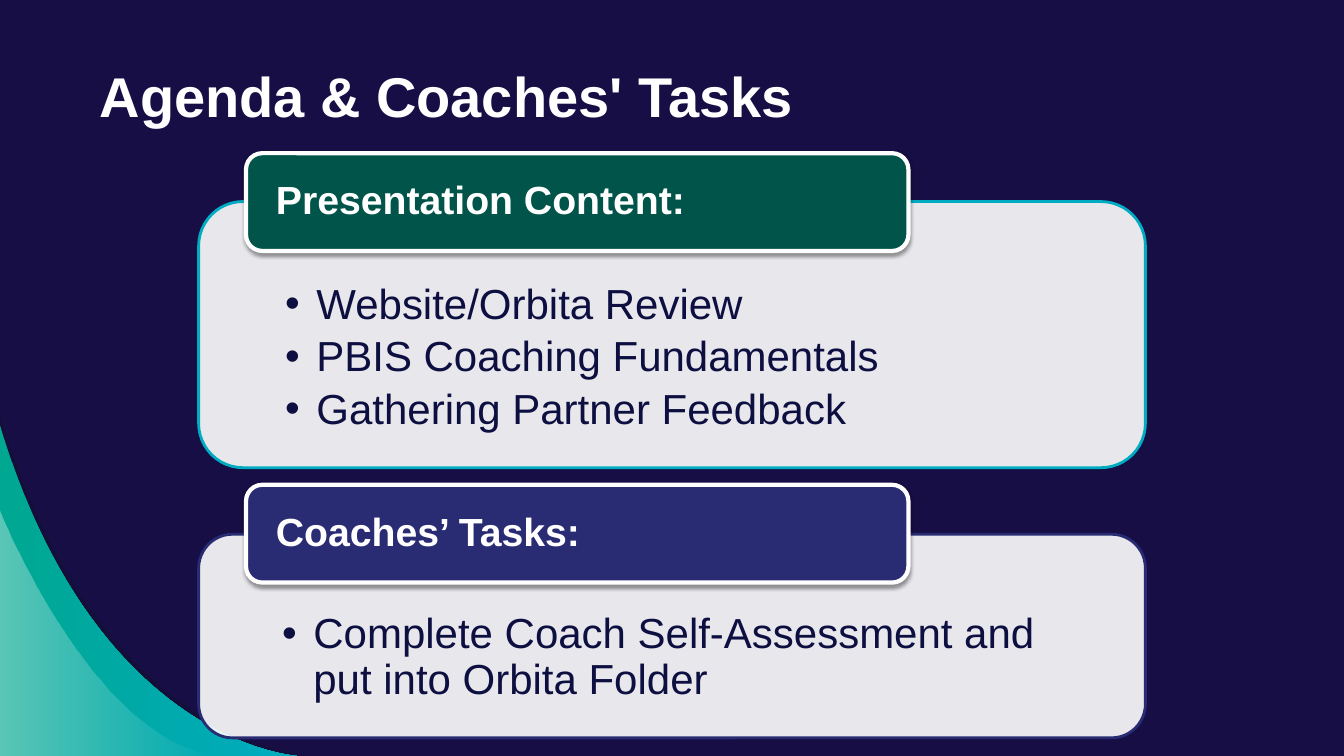
from dataclasses import dataclass

from lxml import etree
from pptx import Presentation
from pptx.dml.color import RGBColor
from pptx.enum.shapes import MSO_SHAPE
from pptx.enum.text import MSO_ANCHOR, PP_ALIGN
from pptx.oxml.ns import qn
from pptx.util import Pt

PX = 9144  # EMU per px, 100 px to the inch
W, H = 1333, 750
ROUNDED = MSO_SHAPE.ROUNDED_RECTANGLE
TOP, MIDDLE = MSO_ANCHOR.TOP, MSO_ANCHOR.MIDDLE
LEFT = PP_ALIGN.LEFT


@dataclass(frozen=True)
class Theme:
    font: str = "Arial"
    background: str = "160E44"
    swoosh_shade: str = "12102F"
    teal: str = "00A791"
    cyan: str = "00ACC2"
    green: str = "005449"
    indigo: str = "292C73"
    white: str = "FFFFFF"
    ink: str = "0D0F41"
    title_size: int = 40
    header_size: int = 28
    body_size: int = 30


def write_text(sp, lines, *, size, color, bold=False, anchor=TOP,
               insets=(0, 0, 0, 0), spacing=1.0, after=0, hanging=0):
    """Fill a shape with paragraphs; a hanging indent in px adds bullets."""
    tf = sp.text_frame
    tf.word_wrap = True
    tf.vertical_anchor = anchor
    tf.margin_left, tf.margin_top, tf.margin_right, tf.margin_bottom = (
        v * PX for v in insets)
    for i, line in enumerate(lines):
        p = tf.add_paragraph() if i else tf.paragraphs[0]
        p.alignment = LEFT
        p.line_spacing = spacing
        p.space_after = Pt(after)
        if hanging:
            pPr = p._p.get_or_add_pPr()
            pPr.set("marL", str(hanging * PX))
            pPr.set("indent", str(-hanging * PX))
            etree.SubElement(pPr, qn("a:buFont"), typeface=Theme.font)
            etree.SubElement(pPr, qn("a:buChar"), char="•")
        r = p.add_run()
        r.text = line
        r.font.name = Theme.font
        r.font.size = Pt(size)
        r.font.bold = bold
        r.font.color.rgb = RGBColor.from_string(color)


class SlideBuilder:
    def __init__(self, prs, theme):
        self.theme = theme
        self.slide = prs.slides.add_slide(prs.slide_layouts[6])
        fill = self.slide.background.fill
        fill.solid()
        fill.fore_color.rgb = RGBColor.from_string(theme.background)

    def paint(self, sp, colors, alphas=()):
        """Solid fill for one colour, left-to-right gradient for two."""
        sp.shadow.inherit = False
        if len(colors) == 1:
            sp.fill.solid()
            sp.fill.fore_color.rgb = RGBColor.from_string(colors[0])
        else:
            sp.fill.gradient()
            sp.fill.gradient_angle = 0
            for stop, color in zip(sp.fill.gradient_stops, colors):
                stop.color.rgb = RGBColor.from_string(color)
        for clr, alpha in zip(sp._element.spPr.iter(qn("a:srgbClr")), alphas):
            etree.SubElement(clr, qn("a:alpha"), val=str(alpha * 1000))

    def swoosh(self, bezier, colors, alphas=()):
        """Area between a Bezier curve and the lower left slide corner."""
        start, *rest = bezier
        builder = self.slide.shapes.build_freeform(*start, scale=PX)
        builder.add_line_segments(rest + [(0, H)], close=True)
        sp = builder.convert_to_shape()
        # The first three segments hold the control points of one curve.
        segments = list(sp._element.spPr.iter(qn("a:lnTo")))[:3]
        cubic = etree.Element(qn("a:cubicBezTo"))
        segments[0].addprevious(cubic)
        for segment in segments:
            cubic.append(segment[0])
            segment.getparent().remove(segment)
        self.paint(sp, colors, alphas)
        sp.line.fill.background()

    def rounded(self, box, fill, line, width, alphas=()):
        sp = self.slide.shapes.add_shape(ROUNDED, *(v * PX for v in box))
        self.paint(sp, [fill], alphas)
        sp.line.color.rgb = RGBColor.from_string(line)
        sp.line.width = Pt(width)
        return sp

    def drop_shadow(self, sp):
        effects = sp._element.spPr.find(qn("a:effectLst"))
        shadow = etree.SubElement(
            effects, qn("a:outerShdw"), blurRad=str(Pt(3.1)),
            dist=str(Pt(1.6)), dir="5400000", rotWithShape="0")
        clr = etree.SubElement(shadow, qn("a:srgbClr"), val="000000")
        etree.SubElement(clr, qn("a:alpha"), val="38000")

    def title(self, text, box):
        sp = self.slide.shapes.add_textbox(*(v * PX for v in box))
        write_text(sp, [text], size=self.theme.title_size,
                   color=self.theme.white, bold=True, insets=(10, 10, 10, 10))

    def section(self, tab_top, card_top, height, header, items,
                header_fill, outline):
        """A pale card of bullets with a header tab over its top edge."""
        th = self.theme
        card = self.rounded((197, card_top, 939, height), th.white, outline,
                            2, [90])
        write_text(card, items, size=th.body_size, color=th.ink,
                   insets=(73, 68, 73, 23), spacing=0.9, after=5, hanging=31)
        tab = self.rounded((244, tab_top, 657, 97), header_fill, th.white, 3)
        self.drop_shadow(tab)
        write_text(tab, [header], size=th.header_size, color=th.white,
                   bold=True, anchor=MIDDLE, insets=(25, 0, 25, 0), spacing=0.9)


def main():
    prs = Presentation()
    prs.slide_width, prs.slide_height = W * PX, H * PX
    th = Theme()
    s = SlideBuilder(prs, th)

    s.swoosh([(0, 413), (98, 739), (303, H), (303, H)], [th.swoosh_shade], [54])
    s.swoosh([(0, 422), (95, 739), (295, H), (295, H)], [th.teal, th.cyan])
    s.swoosh([(0, 506), (0, 506), (91, 735), (216, H)],
             [th.white, th.white], [36, 0])

    s.section(152, 200, 264, "Presentation Content:",
              ["Website/Orbita Review", "PBIS Coaching Fundamentals",
               "Gathering Partner Feedback"], th.green, th.cyan)
    s.section(481, 530, 202, "Coaches’ Tasks:",
              ["Complete Coach Self-Assessment and put into Orbita Folder"],
              th.indigo, th.indigo)
    s.title("Agenda & Coaches' Tasks", (89, 51, 1026, 92))
    prs.save("out.pptx")


if __name__ == "__main__":
    main()
